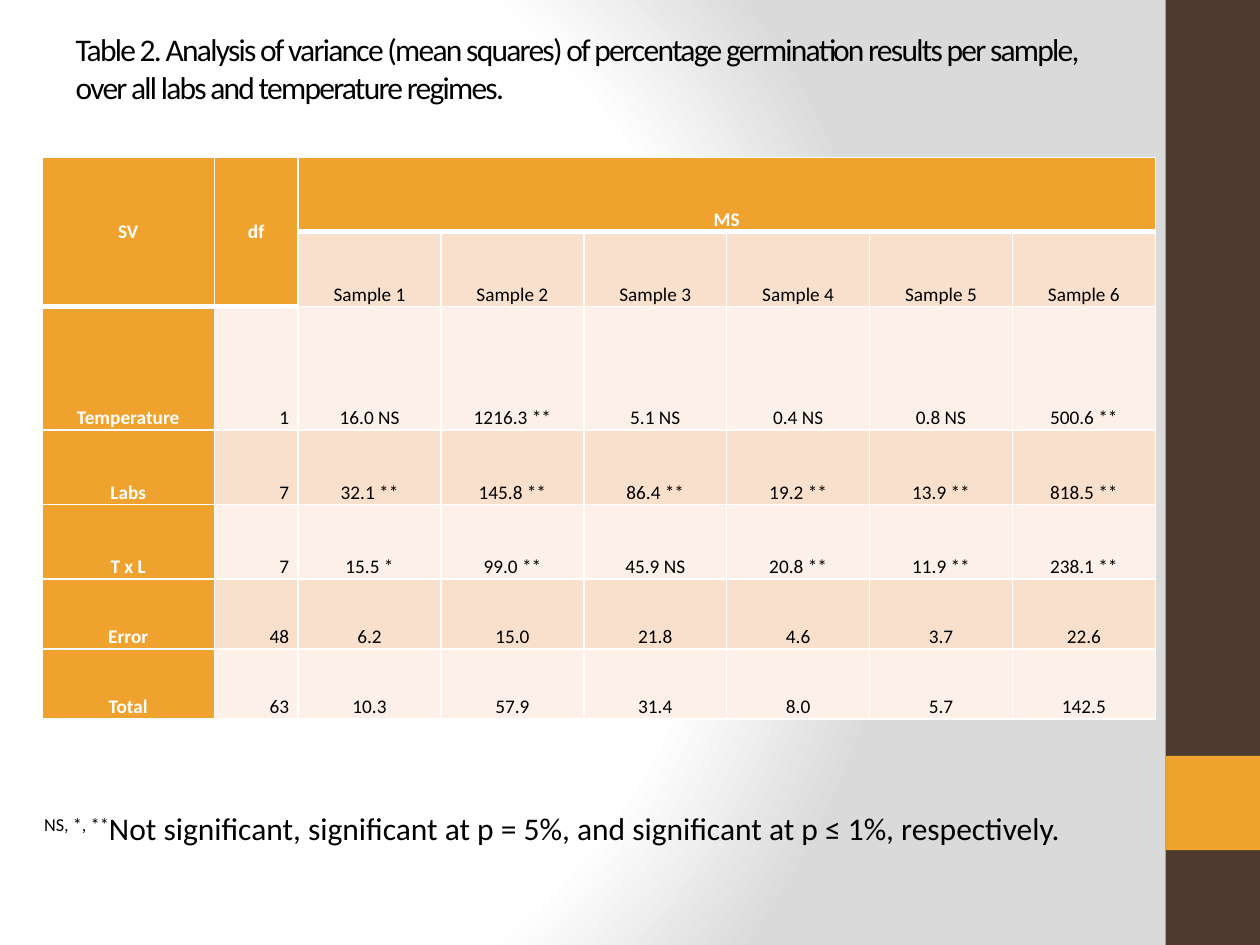
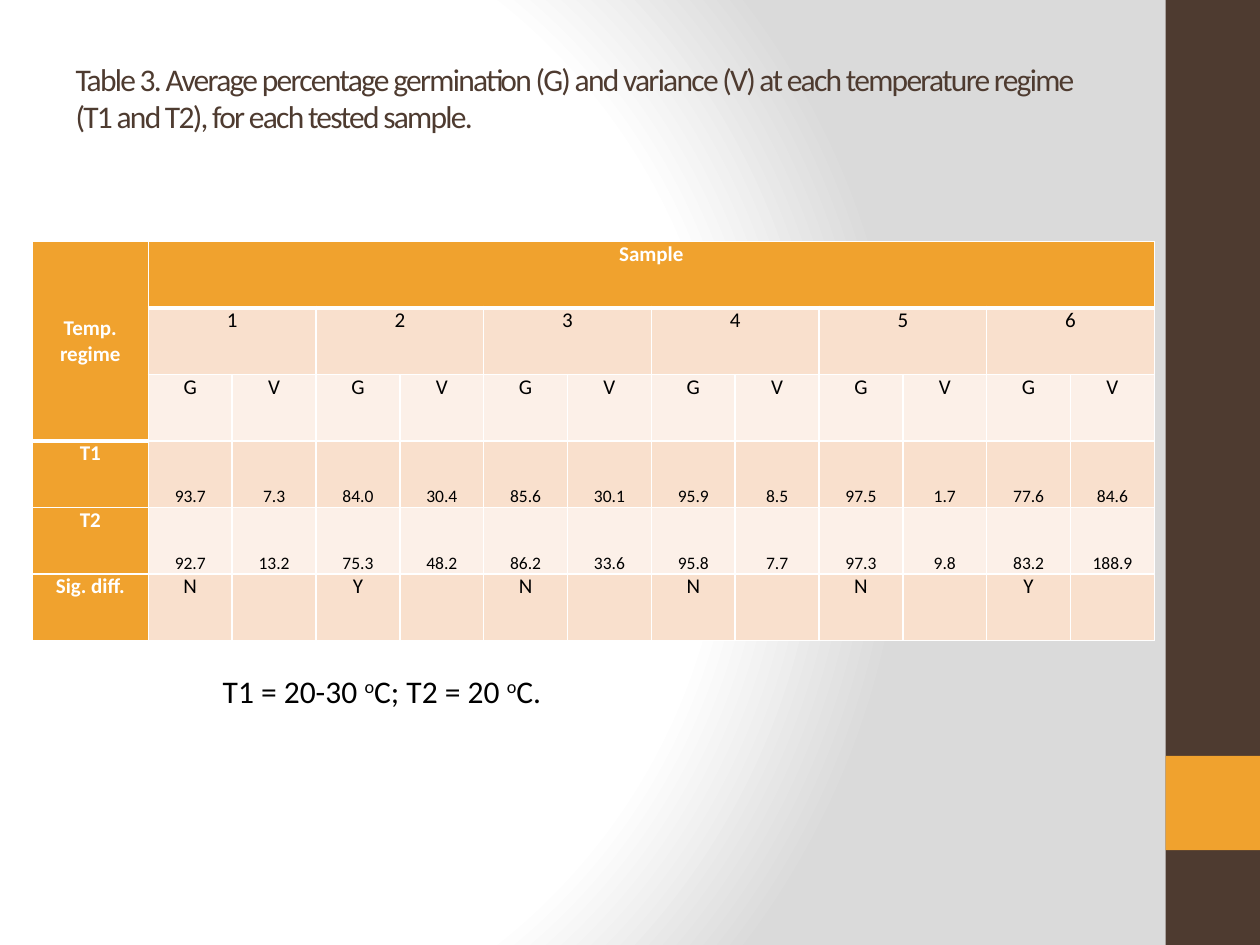
"""Build two slides of germination test tables with a shared title style and side band."""
from pptx import Presentation
from pptx.dml.color import RGBColor
from pptx.enum.shapes import MSO_SHAPE
from pptx.enum.text import MSO_ANCHOR, MSO_AUTO_SIZE, PP_ALIGN
from pptx.oxml import parse_xml
from pptx.oxml.ns import nsdecls, qn
from pptx.util import Cm, Pt

RECTANGLE = MSO_SHAPE.RECTANGLE
TOP, MIDDLE, BOTTOM = MSO_ANCHOR.TOP, MSO_ANCHOR.MIDDLE, MSO_ANCHOR.BOTTOM
LEFT, CENTER, RIGHT = PP_ALIGN.LEFT, PP_ALIGN.CENTER, PP_ALIGN.RIGHT
NO_FIT = MSO_AUTO_SIZE.NONE
TITLE_ONLY = "Title Only"

COLORS = {
    "brown": "4E3B30", "orange": "F0A22E", "black": "000000", "white": "FFFFFF",
    "gray": "DADADA", "dark row": "F9E0CD", "light row": "FCF0E8",
}
FONT = "Calibri"
TITLE_AREA = (1.27, 0.6, 21.16, 3.18)
BANDS = [("brown", (23.5, 0, 1.9, 19.05)), ("orange", (23.5, 15.24, 1.9, 1.9))]

VARIANCE = {
    "title": "Table 2. Analysis of variance (mean squares) of percentage germination "
             "results per sample, over all labs and temperature regimes.",
    "title color": "black",
    "title inset": 0,
    "corner": (0.85, 3.17),
    "columns": [3.47, 1.69] + [2.88] * 6,
    "heights": [1.5, 1.51, 2.49, 1.5, 1.5, 1.41, 1.41],
    "rows": [
        ["SV", "df", "MS"],
        ["", ""] + [f"Sample {number}" for number in range(1, 7)],
        ["Temperature", "1", "16.0 NS", "1216.3 **", "5.1 NS", "0.4 NS", "0.8 NS", "500.6 **"],
        ["Labs", "7", "32.1 **", "145.8 **", "86.4 **", "19.2 **", "13.9 **", "818.5 **"],
        ["T x L", "7", "15.5 *", "99.0 **", "45.9 NS", "20.8 **", "11.9 **", "238.1 **"],
        ["Error", "48", "6.2", "15.0", "21.8", "4.6", "3.7", "22.6"],
        ["Total", "63", "10.3", "57.9", "31.4", "8.0", "5.7", "142.5"],
    ],
    "merges": [((0, 0), (1, 0)), ((0, 1), (1, 1)), ((0, 2), (0, 7))],
    "size": 11,
    "value size": 11,
    "anchor": BOTTOM,
    "value rows": range(2, 7),
    "right column": 1,
    "note": [("NS, *, **", True),
             ("Not significant, significant at p = 5%, and significant at p ≤ 1%, "
              "respectively.", False)],
    "note area": (0.64, 13.49, 24.5, 4.62),
    "note inset": 2.82,
}
AVERAGES = {
    "title": "Table 3. Average percentage germination (G) and variance (V) at each "
             "temperature regime (T1 and T2), for each tested sample.",
    "title color": "brown",
    "title inset": 0.6,
    "corner": (0.65, 4.87),
    "columns": [2.34] + [1.69] * 12,
    "heights": [1.34] * 6,
    "rows": [
        ["Temp. regime", "Sample"],
        ["", "1", "", "2", "", "3", "", "4", "", "5", "", "6"],
        [""] + ["G", "V"] * 6,
        ["T1", "93.7", "7.3", "84.0", "30.4", "85.6", "30.1",
         "95.9", "8.5", "97.5", "1.7", "77.6", "84.6"],
        ["T2", "92.7", "13.2", "75.3", "48.2", "86.2", "33.6",
         "95.8", "7.7", "97.3", "9.8", "83.2", "188.9"],
        ["Sig. diff.", "N", "", "Y", "", "N", "", "N", "", "N", "", "Y"],
    ],
    "merges": [((0, 0), (2, 0)), ((0, 1), (0, 12))]
              + [((1, column), (1, column + 1)) for column in range(1, 13, 2)],
    "size": 12,
    "value size": 10,
    "anchor": TOP,
    "value rows": range(3, 5),
    "right column": None,
    "note": [("T1 = 20-30 ", False), ("o", True), ("C; T2 = 20 ", False),
             ("o", True), ("C.", False)],
    "note area": (4.24, 13.41, 7.2, 1.8),
    "note inset": 0.13,
}


def color(name):
    return RGBColor.from_string(COLORS[name])


def apply(target, values):
    for name, value in values.items():
        setattr(target, name, value)


def add_span(para, text, size, shade, bold=False):
    span = para.add_run()
    span.text = text
    apply(span.font, {"name": FONT, "size": Pt(size), "bold": bold})
    span.font.color.rgb = color(shade)


def style_master(deck):
    master = deck.slide_master
    for layout in list(deck.slide_layouts):
        if layout.name != TITLE_ONLY:
            deck.slide_layouts.remove(layout)
    master.background.fill.solid()
    stops = "".join(
        f'<a:gs pos="{place}"><a:srgbClr val="{COLORS[name]}"/></a:gs>'
        for place, name in [(0, "white"), (75000, "white"), (100000, "gray")])
    background = parse_xml(
        f'<p:bg {nsdecls("p", "a")}><p:bgPr><a:gradFill rotWithShape="1">'
        f'<a:gsLst>{stops}</a:gsLst><a:path path="circle">'
        '<a:fillToRect l="20000" t="50000" r="100000" b="50000"/></a:path>'
        '</a:gradFill><a:effectLst/></p:bgPr></p:bg>')
    content = master.element.find(qn("p:cSld"))
    content.replace(content.find(qn("p:bg")), background)


def add_bands(page):
    for name, area in BANDS:
        band = page.shapes.add_shape(RECTANGLE, *map(Cm, area))
        band.shadow.inherit = False
        band.fill.solid()
        band.fill.fore_color.rgb = color(name)
        band.line.fill.background()


def add_title(page, content):
    title = page.shapes.title
    apply(title, dict(zip(("left", "top", "width", "height"), map(Cm, TITLE_AREA))))
    apply(title.text_frame, {
        "auto_size": NO_FIT, "word_wrap": True, "vertical_anchor": TOP,
        "margin_top": Cm(content["title inset"]), "margin_bottom": 0})
    para = title.text_frame.paragraphs[0]
    para.alignment = LEFT
    add_span(para, content["title"], 18, content["title color"])
    for properties in title.element.iter(qn("a:rPr")):
        properties.set("spc", "-100")


def add_borders(tc, thick):
    properties = tc.get_or_add_tcPr()
    for position, side in enumerate("LRTB"):
        width = Pt(3 if thick and side == "B" else 1)
        properties.insert(position, parse_xml(
            f'<a:ln{side} {nsdecls("a")} w="{width}"><a:solidFill>'
            f'<a:srgbClr val="{COLORS["white"]}"/></a:solidFill></a:ln{side}>'))


def add_data_table(page, content):
    columns, heights = content["columns"], content["heights"]
    frame = page.shapes.add_table(
        len(heights), len(columns), *map(Cm, content["corner"]),
        Cm(sum(columns)), Cm(sum(heights)))
    table = frame.table
    for column, width in zip(table.columns, columns):
        column.width = Cm(width)
    for row, height in zip(table.rows, heights):
        row.height = Cm(height)
    for first, last in content["merges"]:
        table.cell(*first).merge(table.cell(*last))
    tall = {first for first, last in content["merges"] if last[0] > first[0]}
    cells = frame.element.iter(qn("a:tc"))
    for r, texts in enumerate(content["rows"]):
        for c in range(len(columns)):
            cell = table.cell(r, c)
            text = texts[c] if c < len(texts) else ""
            head = r == 0 or c == 0
            value = c > 0 and r in content["value rows"]
            anchor = MIDDLE if (r, c) in tall else BOTTOM if value else content["anchor"]
            apply(cell, {"margin_left": Cm(0.18), "margin_right": Cm(0.18),
                         "margin_top": 0, "margin_bottom": 0, "vertical_anchor": anchor})
            cell.fill.solid()
            cell.fill.fore_color.rgb = color(
                "orange" if head else "dark row" if r % 2 else "light row")
            add_borders(next(cells), r == 0)
            if text:
                para = cell.text_frame.paragraphs[0]
                para.alignment = RIGHT if value and c == content["right column"] else CENTER
                add_span(para, text, content["value size" if value else "size"],
                         "white" if head else "black", head)


def add_note(page, content):
    box = page.shapes.add_textbox(*map(Cm, content["note area"]))
    apply(box.text_frame, {"word_wrap": True, "vertical_anchor": TOP,
                           "margin_top": Cm(content["note inset"])})
    for text, raised in content["note"]:
        add_span(box.text_frame.paragraphs[0], text, 18, "black")
    for properties, (text, raised) in zip(box.element.iter(qn("a:rPr")), content["note"]):
        if raised:
            properties.set("baseline", "30000")


def main():
    deck = Presentation()
    apply(deck, {"slide_width": Cm(25.4), "slide_height": Cm(19.05)})
    style_master(deck)
    for content in (VARIANCE, AVERAGES):
        page = deck.slides.add_slide(deck.slide_layouts.get_by_name(TITLE_ONLY))
        add_bands(page)
        add_title(page, content)
        add_data_table(page, content)
        add_note(page, content)
    deck.save("out.pptx")


if __name__ == "__main__":
    main()
